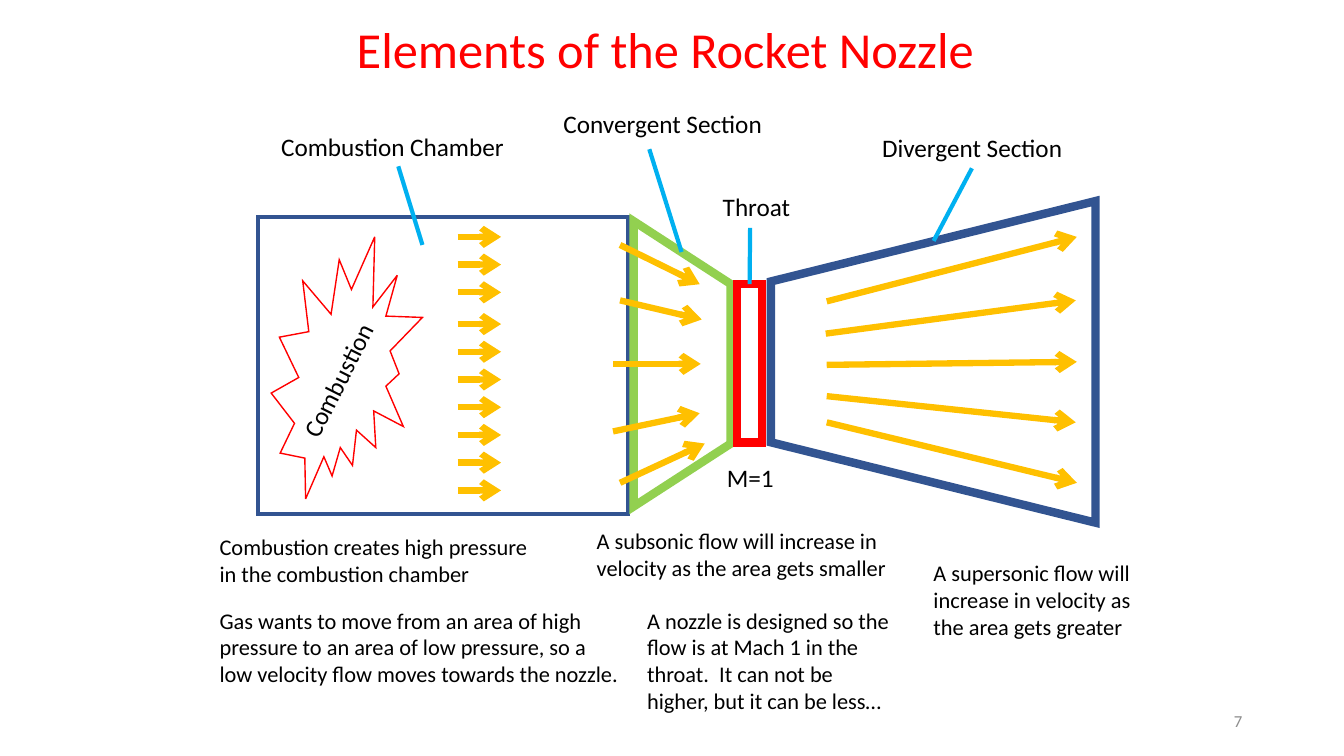
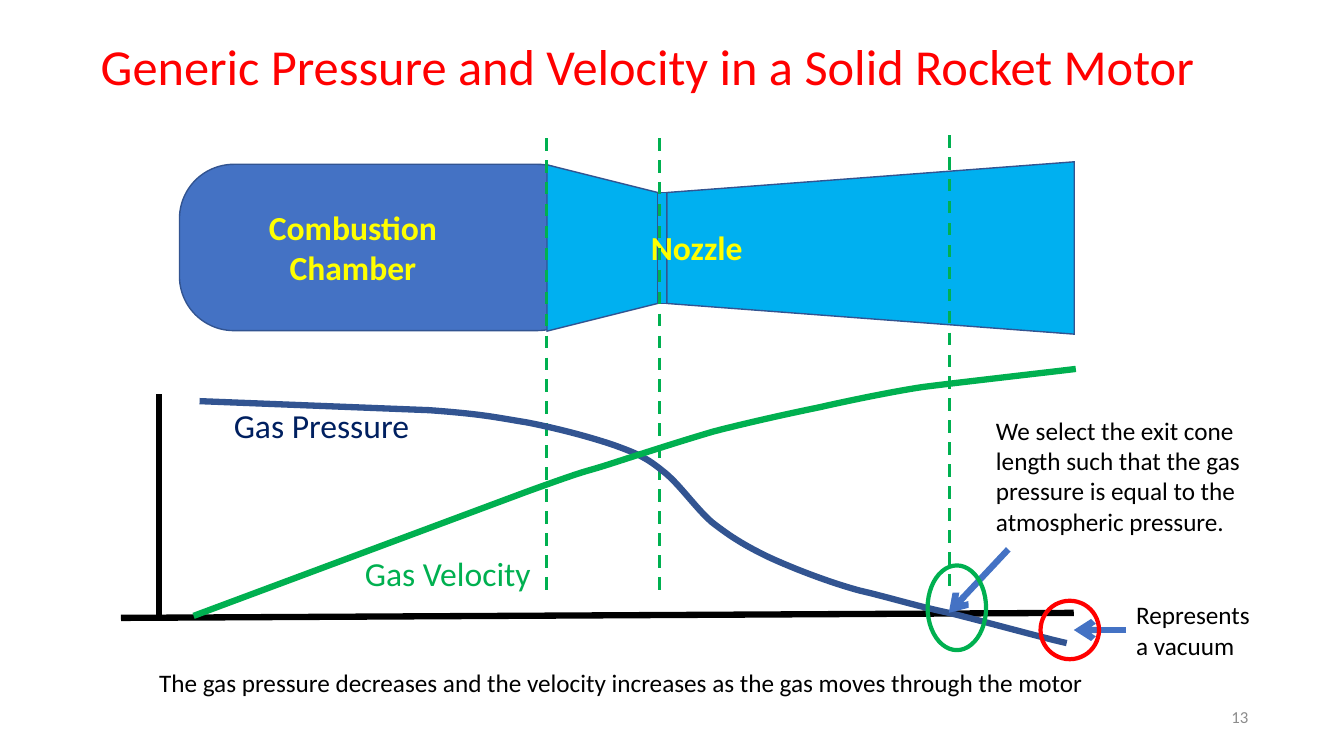
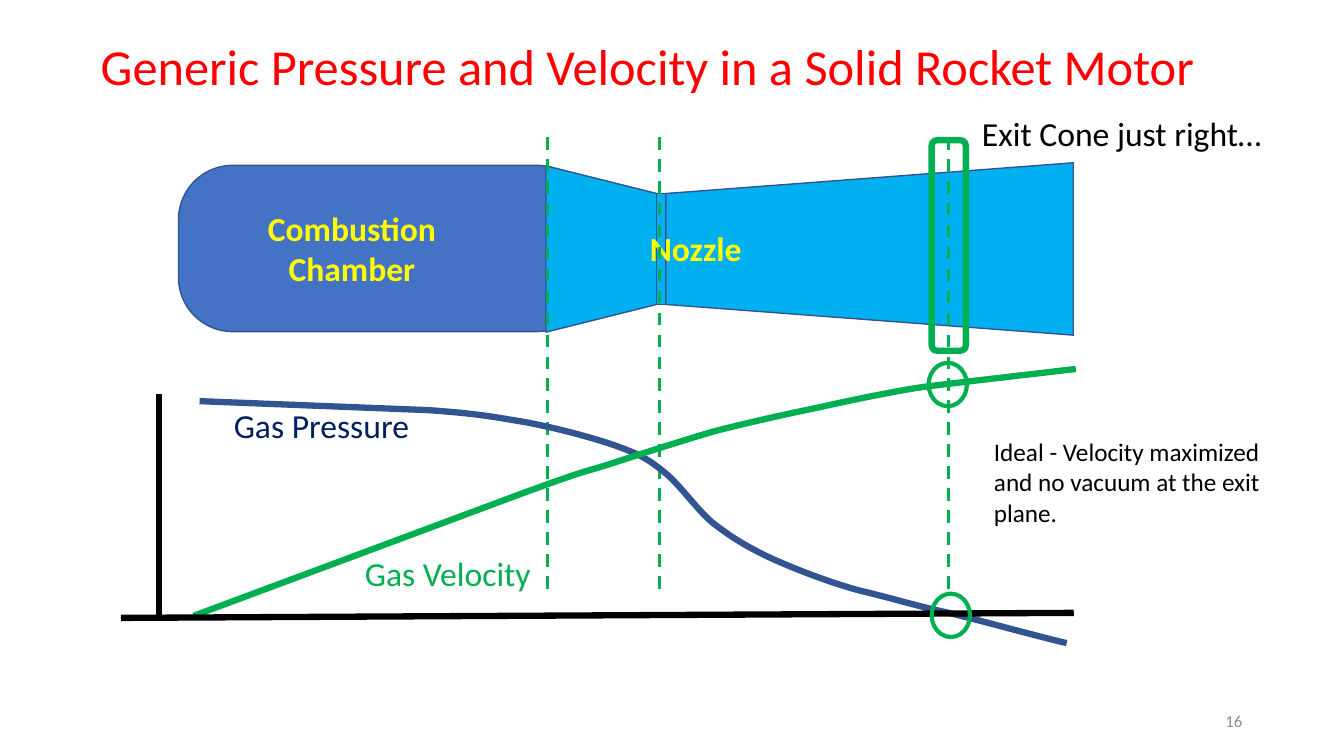
from lxml import etree
from pptx import Presentation
from pptx.dml.color import RGBColor
from pptx.enum import dml, shapes, text
from pptx.oxml.ns import qn
from pptx.util import Inches, Pt

# Shared look
FONT = "Calibri"
RED = RGBColor(0xFF, 0x00, 0x00)
BLACK = RGBColor(0x00, 0x00, 0x00)
GRAY = RGBColor(0x8C, 0x8C, 0x8C)
NAVY = RGBColor(0x00, 0x20, 0x60)
EDGE = RGBColor(0x32, 0x54, 0x91)
BLUE = RGBColor(0x44, 0x72, 0xC4)
SKY = RGBColor(0x00, 0xB0, 0xF0)
LIME = RGBColor(0x92, 0xD0, 0x50)
GREEN = RGBColor(0x00, 0xB0, 0x50)
GOLD = RGBColor(0xFF, 0xC0, 0x00)
YELLOW = RGBColor(0xFF, 0xFF, 0x00)

KIND = shapes.MSO_SHAPE
ALIGN = text.PP_ALIGN
ANCHOR = text.MSO_ANCHOR
FIT = text.MSO_AUTO_SIZE

# Curves in inches from the plot's corner: start, line end, then
# Bézier pieces (two controls and an end)
PRESSURE = [(0.78, 0.32), (3.06, 0.41),
            (3.6, 0.45, 3.71, 0.48, 4.02, 0.53),
            (4.33, 0.59, 4.67, 0.68, 4.9, 0.76),
            (5.12, 0.84, 5.21, 0.88, 5.37, 1.01),
            (5.53, 1.13, 5.69, 1.37, 5.86, 1.52),
            (6.04, 1.66, 6.18, 1.75, 6.43, 1.87),
            (6.67, 1.98, 7.03, 2.12, 7.33, 2.2),
            (7.63, 2.27, 7.88, 2.35, 8.21, 2.42),
            (8.54, 2.5, 9.19, 2.68, 9.38, 2.72)]
VELOCITY = [(0.72, 2.45), (4.02, 1.22),
            (4.71, 0.97, 4.55, 1.04, 4.86, 0.94),
            (5.17, 0.84, 5.54, 0.72, 5.88, 0.62),
            (6.23, 0.53, 6.59, 0.45, 6.93, 0.38),
            (7.28, 0.3, 7.74, 0.21, 7.95, 0.18),
            (8.17, 0.15, 9.4, 0.01, 9.47, 0)]


def write(s, words, x, y, w, h, size=18, color=BLACK, bold=False,
          align=ALIGN.LEFT, anchor=ANCHOR.TOP, turn=0, space=None,
          fit=FIT.SHAPE_TO_FIT_TEXT):
    box = s.shapes.add_textbox(Inches(x), Inches(y), Inches(w), Inches(h))
    box.rotation = turn
    frame = box.text_frame
    frame.word_wrap = True
    frame.auto_size = fit
    frame.vertical_anchor = anchor
    par = frame.paragraphs[0]
    par.alignment = align
    par.line_spacing = space
    run = par.add_run()
    run.text = words
    font = run.font
    font.name, font.size, font.bold = FONT, Pt(size), bold
    font.color.rgb = color
    return box


def style(item, line, width, fill=None):
    item.shadow.inherit = False
    if fill is None:
        item.fill.background()
    else:
        item.fill.solid()
        item.fill.fore_color.rgb = fill
    item.line.color.rgb = line
    item.line.width = Pt(width)


def draw(s, kind, x, y, w, h, line, width, fill=None, turn=0, adj=None):
    item = s.shapes.add_shape(kind, Inches(x), Inches(y), Inches(w), Inches(h))
    style(item, line, width, fill)
    item.rotation = turn
    if adj is not None:
        item.adjustments[0] = adj
    if kind != KIND.OVAL:
        etree.SubElement(item.line._get_or_add_ln(), qn("a:miter"), lim="800000")
    return item


def link(s, x1, y1, x2, y2, color, width, arrow=False, dash=False):
    item = s.shapes.add_connector(shapes.MSO_CONNECTOR.STRAIGHT, Inches(x1),
                                  Inches(y1), Inches(x2), Inches(y2))
    item.line.color.rgb = color
    item.line.width = Pt(width)
    if dash:
        item.line.dash_style = dml.MSO_LINE.DASH
    if arrow:
        etree.SubElement(item.line._get_or_add_ln(), qn("a:tailEnd"), type="arrow")
    etree.SubElement(item._element.spPr, qn("a:effectLst"))
    return item


def flow(s, x, y, ends):
    for x1, y1, x2, y2 in ends:
        link(s, x + x1, y + y1, x + x2, y + y2, GOLD, 4.5, arrow=True)


def curve(s, x, y, parts, color):
    ends = [(Inches(x + p[-2]), Inches(y + p[-1])) for p in parts]
    form = s.shapes.build_freeform(*ends[0])
    form.add_line_segments(ends[1:], close=False)
    item = form.convert_to_shape()
    style(item, color, 4.5)
    # Turn the straight pieces after the first into Bézier pieces
    legs = list(item._element.iter(qn("a:lnTo")))[1:]
    for leg, part in zip(legs, parts[2:]):
        bend = etree.Element(qn("a:cubicBezTo"))
        for px, py in zip(part[::2], part[1::2]):
            etree.SubElement(bend, qn("a:pt"),
                             x=str(Inches(x + px) - item.left),
                             y=str(Inches(y + py) - item.top))
        leg.getparent().replace(leg, bend)


def start(deck, words, box, num, spot=(9.42, 6.95), **look):
    s = deck.slides.add_slide(deck.slide_layouts[6])
    write(s, words, *box, size=36, color=RED, align=ALIGN.CENTER,
          fit=FIT.NONE, **look)
    write(s, num, *spot, 3, 0.4, size=12, color=GRAY, align=ALIGN.RIGHT,
          anchor=ANCHOR.MIDDLE, fit=FIT.NONE)
    return s


# Nozzle regions
def chamber(s, x, y):
    draw(s, KIND.RECTANGLE, x + 0.48, y + 0.9, 3.67, 2.95, EDGE, 3)
    write(s, "Combustion Chamber", x + 0.61, y, 2.52, 0.4)
    link(s, x + 1.87, y + 0.4, x + 2.11, y + 1.18, SKY, 3)
    draw(s, KIND.EXPLOSION2, x + 0.61, y + 1.1, 1.5, 2.6, RED, 1)
    write(s, "Combustion", x + 0.5, y + 2.23, 1.63, 0.4, turn=296.8)
    write(s, "Combustion creates high pressure in the combustion chamber",
          x, y + 3.99, 3.33, 0.64, size=16)
    # Three arrows, a slightly wider gap, then seven
    rows = [1.1 + 0.275 * i + (0.04 if i > 2 else 0) for i in range(10)]
    flow(s, x, y, [(2.46, r, 2.89, r) for r in rows])
    write(s, "Gas wants to move from an area of high pressure to an area of low "
          "pressure, so a low velocity flow moves towards the nozzle.",
          x, y + 4.72, 4.16, 1.18, size=16)


def converge(s, x, y):
    draw(s, KIND.TRAPEZOID, x, y + 2.1, 2.83, 0.96, LIME, 6, turn=90, adj=0.648)
    write(s, "Convergent Section", x + 0.14, y, 2.99, 0.4)
    link(s, x + 1.09, y + 0.45, x + 1.41, y + 1.47, SKY, 3)
    flow(s, x, y, [(0.8, 1.4, 1.59, 1.79), (0.8, 1.95, 1.61, 2.14),
                   (0.73, 2.58, 1.6, 2.58), (0.73, 3.25, 1.59, 3.07),
                   (0.8, 3.76, 1.64, 3.37)])
    write(s, "A subsonic flow will increase in velocity as the area gets smaller",
          x + 0.47, y + 4.15, 3.33, 0.64, size=16)


def throat(s, x, y):
    ring = draw(s, KIND.RECTANGLE, x + 0.24, y + 0.97, 0.25, 1.57, RED, 6)
    write(s, "Throat", x, y, 1.16, 0.4)
    lead = link(s, x + 0.37, y + 0.41, x + 0.37, y + 0.97, SKY, 3)
    lead.end_connect(ring, 0)
    write(s, "A nozzle is designed so the flow is at Mach 1 in the throat.  "
          "It can not be higher, but it can be less…",
          x - 0.75, y + 4.12, 2.67, 1.18, size=16)
    write(s, "M=1", x + 0.04, y + 2.69, 0.91, 0.4)


def diverge(s, x, y):
    draw(s, KIND.TRAPEZOID, x, y + 0.72, 3.19, 3.22, EDGE, 6, turn=270)
    write(s, "Divergent Section", x + 0.99, y, 2.22, 0.4)
    link(s, x + 1.98, y + 0.41, x + 1.6, y + 1.13, SKY, 3)
    flow(s, x, y, [(0.54, 1.73, 3.02, 1.09), (0.53, 2.05, 3.01, 1.72),
                   (0.54, 2.36, 3.02, 2.33), (0.54, 2.67, 3.01, 2.93),
                   (0.54, 2.93, 3.02, 3.53)])
    write(s, "A supersonic flow will increase in velocity as the area gets greater",
          x + 1.5, y + 4.24, 2.18, 0.91, size=16)


# Motor and its graph
def motor(s, x, y):
    draw(s, KIND.ROUNDED_RECTANGLE, x, y, 4.09, 1.65, EDGE, 1, BLUE, adj=0.327)
    draw(s, KIND.TRAPEZOID, x + 3.38, y + 0.27, 1.65, 1.12, EDGE, 1, SKY, turn=90)
    draw(s, KIND.TRAPEZOID, x + 6, y - 1.19, 1.71, 4.04, EDGE, 1, SKY,
         turn=270, adj=0.178)
    draw(s, KIND.RECTANGLE, x + 4.74, y + 0.28, 0.09, 1.1, EDGE, 1, SKY)
    for words, dx, dy, h in (("Combustion Chamber", 0.41, 0.37, 0.91),
                             ("Nozzle", 3.82, 0.57, 0.5)):
        write(s, words, x + dx, y + dy, 2.62, h, size=24, color=YELLOW,
              bold=True, align=ALIGN.CENTER)


def base(s, x, y):
    link(s, x + 9.45, y + 2.42, x, y + 2.47, BLACK, 4.5)


def plot(s, x, y, marks, front=False):
    link(s, x + 0.38, y + 0.25, x + 0.38, y + 2.5, BLACK, 4.5)
    if not front:
        base(s, x, y)
    for dx, dy in marks:
        link(s, x + dx, y + dy, x + dx, y + dy + 4.57, GREEN, 2.25, dash=True)
    curve(s, x, y, PRESSURE, EDGE)
    curve(s, x, y, VELOCITY, GREEN)
    write(s, "Gas Velocity", x + 2.32, y + 1.78, 2.02, 0.5, size=24, color=GREEN)
    write(s, "Gas Pressure", x + 1.02, y + 0.31, 2.88, 0.5, size=24, color=NAVY)
    if front:
        base(s, x, y)


# Slides
def nozzle(deck):
    s = start(deck, "Elements of the Rocket Nozzle", (2.1, 0.13, 9, 0.78), "7",
              anchor=ANCHOR.MIDDLE, space=0.9)
    for part, x, y in ((chamber, 2.08, 1.25), (converge, 5.35, 1.03),
                       (throat, 7.07, 1.85), (diverge, 7.66, 1.26)):
        part(s.shapes.add_group_shape(), x, y)


def graph(deck, num, spot, x, y, marks, front=False):
    s = start(deck, "Generic Pressure and Velocity in a Solid Rocket Motor",
              (0.68, 0.3, 11.49, 0.85), num, spot)
    motor(s.shapes.add_group_shape(), x, y)
    plot(s, 1.2, 3.66, marks, front)
    return s


def vacuum(deck):
    s = graph(deck, "13", (9.48, 6.91), 1.78, 1.63,
              ((4.22, -2.29), (5.34, -2.29), (8.22, -2.32)))
    note = write(s, "Represents a vacuum", 11.17, 5.9, 1.46, 0.7)
    write(s, "We select the exit cone length such that the gas pressure is equal "
          "to the atmospheric pressure.", 9.78, 4.07, 3.21, 1.31)
    lead = link(s, 11.17, 6.25, 10.65, 6.25, BLUE, 4.5, arrow=True)
    lead.begin_connect(note, 1)
    link(s, 10, 5.45, 9.41, 6.08, BLUE, 4.5, arrow=True)
    write(s, "The gas pressure decreases and the velocity increases as the gas "
          "moves through the motor", 1.48, 6.57, 9.5, 0.4)
    draw(s, KIND.OVAL, 9.2, 5.61, 0.58, 0.84, GREEN, 3)
    draw(s, KIND.OVAL, 10.32, 5.96, 0.58, 0.58, RED, 3)


def ideal(deck):
    s = graph(deck, "16", (9.42, 6.95), 1.77, 1.64,
              [(dx, -2.3) for dx in (4.23, 5.34, 8.21)], front=True)
    write(s, "Ideal - Velocity maximized and no vacuum at the exit plane.",
          9.76, 4.28, 2.9, 1.01)
    draw(s, KIND.ROUNDED_RECTANGLE, 9.24, 1.39, 0.34, 2.09, GREEN, 4.5)
    write(s, "Exit Cone just right…", 9.58, 1.07, 3.09, 0.5, size=24,
          align=ALIGN.CENTER)
    for x, y in ((9.21, 3.6), (9.24, 5.89)):
        draw(s, KIND.OVAL, x, y, 0.38, 0.43, GREEN, 3)


def main():
    deck = Presentation()
    deck.slide_width, deck.slide_height = Inches(13.33), Inches(7.5)
    nozzle(deck)
    vacuum(deck)
    ideal(deck)
    deck.save("out.pptx")


if __name__ == "__main__":
    main()
